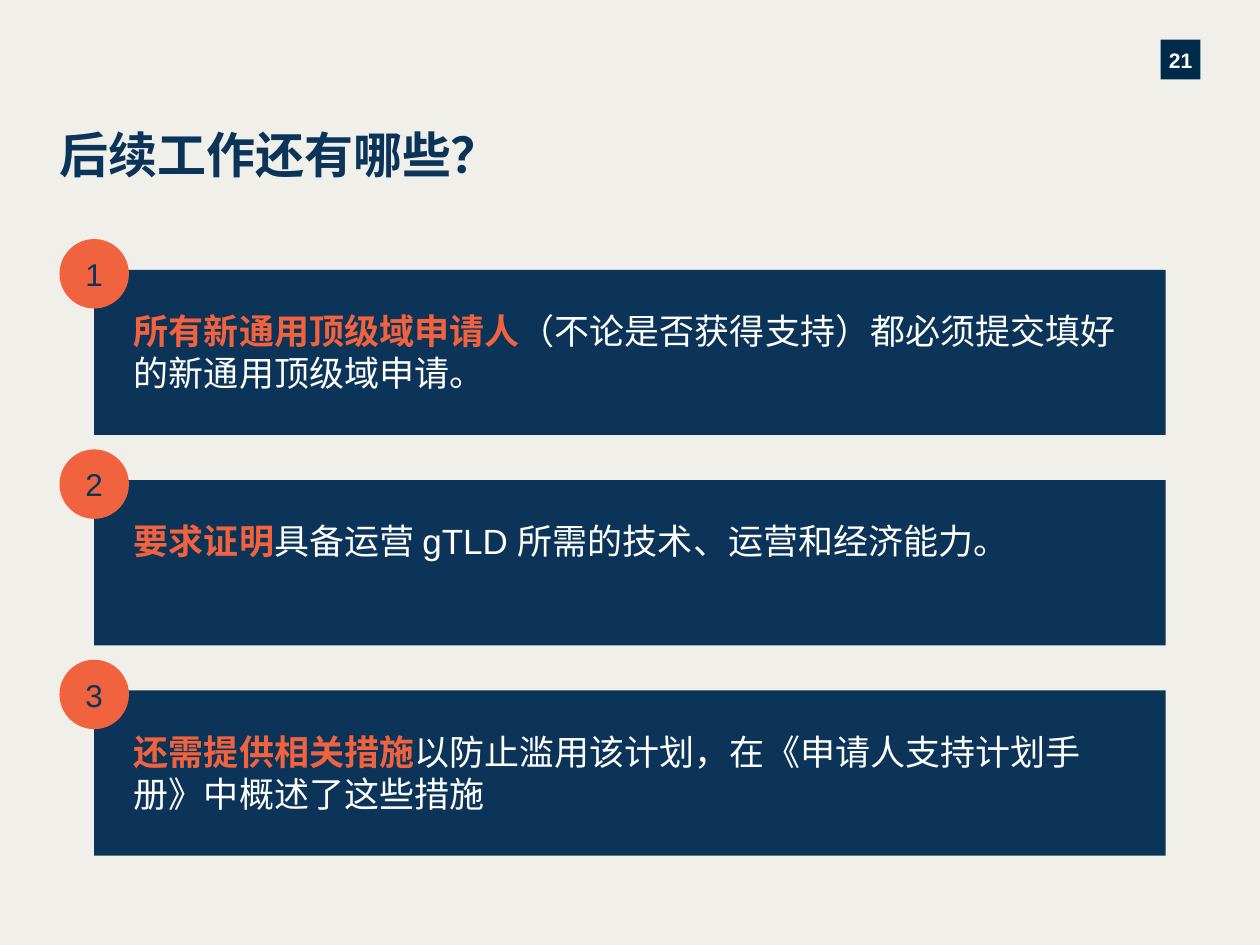
from pptx import Presentation
from pptx.dml.color import RGBColor
from pptx.enum.shapes import MSO_SHAPE
from pptx.enum.text import MSO_ANCHOR, MSO_AUTO_SIZE, PP_ALIGN
from pptx.util import Cm, Pt

NAVY, DARK_NAVY, ORANGE, WHITE, CREAM = "0B3458", "002A49", "F1633E", "FFFFFF", "F1EFEA"

STEPS = [
    ("所有新通用顶级域申请人", "（不论是否获得支持）都必须提交填好的新通用顶级域申请。"),
    ("要求证明", "具备运营 gTLD 所需的技术、运营和经济能力。"),
    ("还需提供相关措施", "以防止滥用该计划，在《申请人支持计划手册》中概述了这些措施"),
]
FIRST_CARD_TOP, FIRST_BADGE_TOP, STEP_PITCH = 5.44, 4.82, 4.24


def color(hex_text):
    return RGBColor.from_string(hex_text)


def set_frame(frame, anchor, margins):
    """Margins are left, top, right, bottom in centimetres."""
    left, top, right, bottom = margins
    values = {
        "word_wrap": True,
        "auto_size": MSO_AUTO_SIZE.NONE,
        "vertical_anchor": anchor,
        "margin_left": Cm(left),
        "margin_top": Cm(top),
        "margin_right": Cm(right),
        "margin_bottom": Cm(bottom),
    }
    for name, value in values.items():
        setattr(frame, name, value)


def add_run(paragraph, text, size, text_color, bold=False):
    run = paragraph.add_run()
    run.text = text
    for name, value in {"name": "Arial", "size": Pt(size), "bold": bold}.items():
        setattr(run.font, name, value)
    run.font.color.rgb = color(text_color)


def add_block(slide, kind, left, top, width, height, fill):
    shape = slide.shapes.add_shape(kind, Cm(left), Cm(top), Cm(width), Cm(height))
    shape.shadow.inherit = False
    shape.fill.solid()
    shape.fill.fore_color.rgb = color(fill)
    shape.line.fill.background()
    return shape


def add_page_number(slide, number):
    shape = add_block(slide, MSO_SHAPE.RECTANGLE, 23.4, 0.8, 0.8, 0.8, DARK_NAVY)
    set_frame(shape.text_frame, MSO_ANCHOR.MIDDLE, (0, 0, 0, 0))
    paragraph = shape.text_frame.paragraphs[0]
    paragraph.alignment = PP_ALIGN.CENTER
    paragraph.line_spacing = 1.08
    add_run(paragraph, number, 12, WHITE, True)


def add_title(slide, text):
    title = slide.shapes.title
    place = {"left": 1.2, "top": 2.5, "width": 14.94, "height": 1.48}
    for name, value in place.items():
        setattr(title, name, Cm(value))
    set_frame(title.text_frame, MSO_ANCHOR.TOP, (0, 0, 0, 0))
    paragraph = title.text_frame.paragraphs[0]
    paragraph.alignment = PP_ALIGN.LEFT
    add_run(paragraph, text, 28, NAVY, True)


def add_card(slide, top, lead, rest):
    card = add_block(slide, MSO_SHAPE.RECTANGLE, 1.9, top, 21.6, 3.33, NAVY)
    set_frame(card.text_frame, MSO_ANCHOR.TOP, (0.8, 0.8, 0.9, 0.8))
    paragraph = card.text_frame.paragraphs[0]
    paragraph.alignment = PP_ALIGN.LEFT
    add_run(paragraph, lead, 20, ORANGE, True)
    add_run(paragraph, rest, 20, WHITE)


def add_badge(slide, top, number):
    badge = add_block(slide, MSO_SHAPE.OVAL, 1.2, top, 1.4, 1.4, ORANGE)
    set_frame(badge.text_frame, MSO_ANCHOR.MIDDLE, (0.25, 0.13, 0.25, 0.13))
    paragraph = badge.text_frame.paragraphs[0]
    paragraph.alignment = PP_ALIGN.CENTER
    add_run(paragraph, str(number), 18, NAVY)


def main():
    presentation = Presentation()
    presentation.slide_width, presentation.slide_height = Cm(25.4), Cm(19.05)
    slide = presentation.slides.add_slide(presentation.slide_layouts[5])
    slide.background.fill.solid()
    slide.background.fill.fore_color.rgb = color(CREAM)

    # Header
    add_page_number(slide, "21")
    add_title(slide, "后续工作还有哪些？")

    # Numbered steps, each badge over the corner of its card
    for index, (lead, rest) in enumerate(STEPS):
        offset = index * STEP_PITCH
        add_card(slide, FIRST_CARD_TOP + offset, lead, rest)
        add_badge(slide, FIRST_BADGE_TOP + offset, index + 1)

    presentation.save("out.pptx")


if __name__ == "__main__":
    main()
